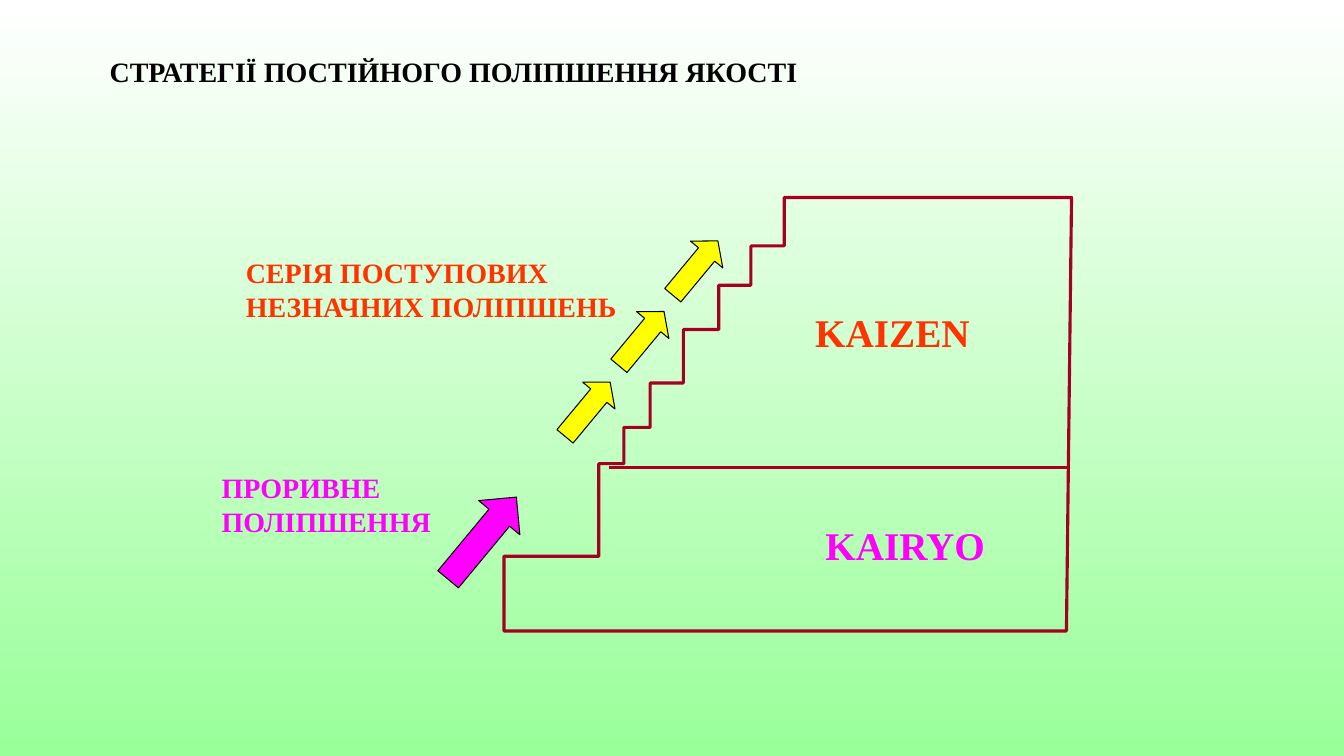
from dataclasses import dataclass

from lxml.etree import SubElement
from pptx import Presentation
from pptx.dml.color import RGBColor
from pptx.enum.shapes import MSO_CONNECTOR, MSO_SHAPE
from pptx.enum.text import MSO_ANCHOR, PP_ALIGN
from pptx.oxml.ns import qn
from pptx.slide import Slide
from pptx.util import Pt

FONT = "Times New Roman"
COLORS = {
    "black": "000000",
    "white": "FFFFFF",
    "mint": "99FF99",
    "orange": "FF3300",
    "magenta": "FF00FF",
    "yellow": "FFFF00",
    "maroon": "A50021",
}


@dataclass
class Label:
    text: str
    left: float
    top: float
    width: float
    height: float
    color: str
    size: float = 20
    align: PP_ALIGN = PP_ALIGN.LEFT
    anchor: MSO_ANCHOR = MSO_ANCHOR.TOP


@dataclass
class Arrow:
    left: float
    top: float
    width: float
    height: float
    color: str
    head: float


LABELS = [
    Label("СТРАТЕГІЇ ПОСТІЙНОГО ПОЛІПШЕННЯ ЯКОСТІ", 0, 23, 648, 55.4, "black",
          align=PP_ALIGN.CENTER, anchor=MSO_ANCHOR.MIDDLE),
    Label("СЕРІЯ ПОСТУПОВИХ НЕЗНАЧНИХ ПОЛІПШЕНЬ", 168.5, 179.3, 285, 66.2, "orange"),
    Label("ПРОРИВНЕ ПОЛІПШЕННЯ", 151.2, 332.6, 193, 63.4, "magenta"),
    Label("KAIZEN", 559.4, 216.7, 156.2, 41, "orange", 28, PP_ALIGN.CENTER),
    Label("KAIRYO", 576.7, 368.6, 139.7, 41, "magenta", 28, PP_ALIGN.CENTER),
]

BREAKTHROUGH = Arrow(325.4, 346.3, 38.2, 76.3, "magenta", 0.5)
SMALL_STEPS = [
    Arrow(404.7 + 38.5 * i, 267.1 - 50.4 * i, 30, 50.4, "yellow", 0.42)
    for i in range(3)
]

# Left edge of each stair and the height of its tread
STAIRS = [
    (360, 397.4), (427.7, 331.2), (445.7, 305.3), (464.4, 273.6),
    (488.2, 235.4), (513.4, 203.8), (536.4, 175.7), (560.2, 141.1),
]
FLOOR = 450.7
BOTTOM_RIGHT, TOP_RIGHT = 761.8, 765.4


def rgb(name: str) -> RGBColor:
    return RGBColor.from_string(COLORS[name])


def paint_background(page: Slide) -> None:
    fill = page.background.fill
    fill.gradient()
    fill.gradient_angle = 270
    for stop, position, color in zip(fill.gradient_stops, (0, 1), ("white", "mint")):
        stop.position = position
        stop.color.rgb = rgb(color)


def add_label(page: Slide, label: Label) -> None:
    box = page.shapes.add_textbox(
        Pt(label.left), Pt(label.top), Pt(label.width), Pt(label.height))
    frame = box.text_frame
    frame.word_wrap = True
    frame.vertical_anchor = label.anchor
    frame.text = label.text
    para = frame.paragraphs[0]
    para.alignment = label.align
    font = para.runs[0].font
    font.name = FONT
    font.size = Pt(label.size)
    font.bold = True
    font.color.rgb = rgb(label.color)


def add_staircase(page: Slide) -> None:
    corners = [(BOTTOM_RIGHT, FLOOR)]
    level = FLOOR
    for edge, tread in STAIRS:
        corners += [(edge, level), (edge, tread)]
        level = tread
    corners.append((TOP_RIGHT, level))
    points = [(Pt(x), Pt(y)) for x, y in corners]
    builder = page.shapes.build_freeform(*points[0])
    builder.add_line_segments(points[1:], close=True)
    staircase = builder.convert_to_shape()
    staircase.shadow.inherit = False
    staircase.fill.background()
    staircase.line.color.rgb = rgb("maroon")
    staircase.line.width = Pt(2.25)


def add_divider(page: Slide) -> None:
    """Separate the KAIZEN area from the KAIRYO area."""
    divider = page.shapes.add_connector(
        MSO_CONNECTOR.STRAIGHT, Pt(434.9), Pt(333.8), Pt(763.6), Pt(333.8))
    divider.line.color.rgb = rgb("maroon")
    divider.line.width = Pt(2.25)
    SubElement(divider._element.spPr, qn("a:effectLst"))


def add_arrow(page: Slide, arrow: Arrow) -> None:
    shape = page.shapes.add_shape(
        MSO_SHAPE.UP_ARROW,
        Pt(arrow.left), Pt(arrow.top), Pt(arrow.width), Pt(arrow.height))
    shape.adjustments[0] = 0.5
    shape.adjustments[1] = arrow.head
    shape.rotation = 39.7
    shape.shadow.inherit = False
    shape.fill.solid()
    shape.fill.fore_color.rgb = rgb(arrow.color)
    shape.line.color.rgb = rgb("black")
    shape.line.width = Pt(0.75)


def main() -> None:
    deck = Presentation()
    deck.slide_width, deck.slide_height = Pt(960), Pt(540)
    page = deck.slides.add_slide(deck.slide_layouts[6])
    paint_background(page)
    add_staircase(page)
    add_divider(page)
    for label in LABELS:
        add_label(page, label)
    for arrow in [BREAKTHROUGH, *SMALL_STEPS]:
        add_arrow(page, arrow)
    deck.save("out.pptx")


if __name__ == "__main__":
    main()
